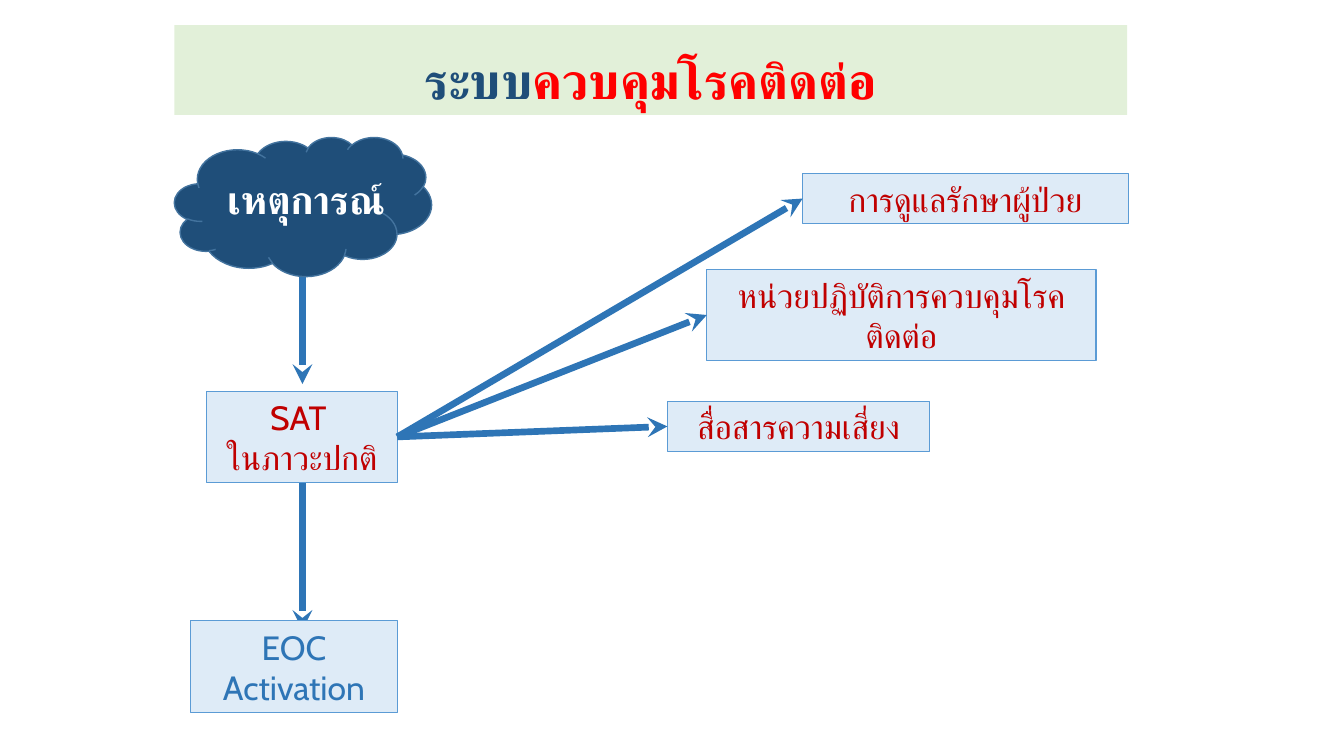
"""Builds the slide on the communicable disease control system."""
from lxml import etree
from pptx import Presentation
from pptx import util as u
from pptx.dml.color import RGBColor
from pptx.enum import shapes, text
from pptx.oxml.ns import qn

COLOURS = {
    "mint": "E2F0D9", "navy": "1F4E79", "red": "FF0000", "arrow": "2E75B6",
    "pale": "DEEBF7", "edge": "5B9BD5", "cloud edge": "43739E",
    "crimson": "C00000", "white": "FFFFFF",
}
FONT = "Cabin"

deck = Presentation()
deck.slide_width = u.Inches(13.33)
deck.slide_height = u.Inches(7.5)
page = deck.slides.add_slide(deck.slide_layouts[6])
column = deck.slide_width / 100
row = deck.slide_height / 100


def add_panel(kind, place, fill, edge, edge_width, lines, size, bold=False, anchor="MIDDLE"):
    left, top, width, height = place
    box = page.shapes.add_shape(kind, int(left * column), int(top * row),
                                int(width * column), int(height * row))
    box.shadow.inherit = False
    if fill:
        box.fill.solid()
        box.fill.fore_color.rgb = RGBColor.from_string(COLOURS[fill])
    else:
        box.fill.background()
    if edge:
        box.line.color.rgb = RGBColor.from_string(COLOURS[edge])
        box.line.width = u.Pt(edge_width)
    else:
        box.line.fill.background()
    frame = box.text_frame
    frame.word_wrap = True
    frame.vertical_anchor = text.MSO_ANCHOR[anchor]
    for index, line in enumerate(lines):
        para = frame.add_paragraph() if index else frame.paragraphs[0]
        para.alignment = text.PP_ALIGN.CENTER
        for words, colour in line:
            span = para.add_run()
            span.text = words
            span.font.name = FONT
            span.font.size = u.Pt(size)
            span.font.bold = bold
            span.font.color.rgb = RGBColor.from_string(COLOURS[colour])
            etree.SubElement(span.font._element, qn("a:cs"), typeface=FONT)
    return box


def add_arrow(start, end):
    arrow = page.shapes.add_connector(
        shapes.MSO_CONNECTOR.STRAIGHT, int(start[0] * column), int(start[1] * row),
        int(end[0] * column), int(end[1] * row))
    arrow.line.color.rgb = RGBColor.from_string(COLOURS["arrow"])
    arrow.line.width = u.Pt(4.75)
    etree.SubElement(arrow.line._get_or_add_ln(), qn("a:tailEnd"), type="stealth")
    etree.SubElement(arrow._element.spPr, qn("a:effectLst"))
    return arrow


RECTANGLE = shapes.MSO_SHAPE.RECTANGLE

title = add_panel(RECTANGLE, (12.98, 3.33, 70.89, 11.87), "mint", None, 0,
                  [[("ระบบ", "navy"), ("ควบคุมโรคติดต่อ", "red")]], 36, True, "BOTTOM")
title.text_frame.paragraphs[0].line_spacing = 0.9

for top, bottom in ((34, 50.8), (59.2, 83.33)):
    add_arrow((22.5, top), (22.5, bottom))

add_panel(shapes.MSO_SHAPE.CLOUD, (12.98, 18.13, 19.13, 18.4), "navy", "cloud edge", 1, [], 28)
add_panel(RECTANGLE, (14.78, 22.53, 15.98, 7.6), None, None, 0,
          [[("เหตุการณ์", "white")]], 28, True, "TOP")

steps = [
    ((14.18, 82.13, 15.38, 12.13), ["EOC Activation"], "arrow"),
    ((15.38, 51.73, 14.18, 12.13), ["SAT ", "ในภาวะปกติ"], "crimson"),
    ((59.72, 22.93, 24.23, 6.67), ["การดูแลรักษาผู้ป่วย"], "crimson"),
    ((52.59, 35.6, 28.96, 12.13), ["หน่วยปฏิบัติการควบคุมโรคติดต่อ"], "crimson"),
    ((49.66, 53.07, 19.5, 6.67), ["สื่อสารความเสี่ยง"], "crimson"),
]
boxes = [add_panel(RECTANGLE, place, "pale", "edge", 0.75,
                   [[(line, colour)] for line in lines], 24)
         for place, lines, colour in steps]

activation, awareness, *responses = boxes
for response in responses:
    arrow = add_arrow((0, 0), (1, 1))
    arrow.begin_connect(awareness, 3)
    arrow.end_connect(response, 1)

deck.save("out.pptx")
